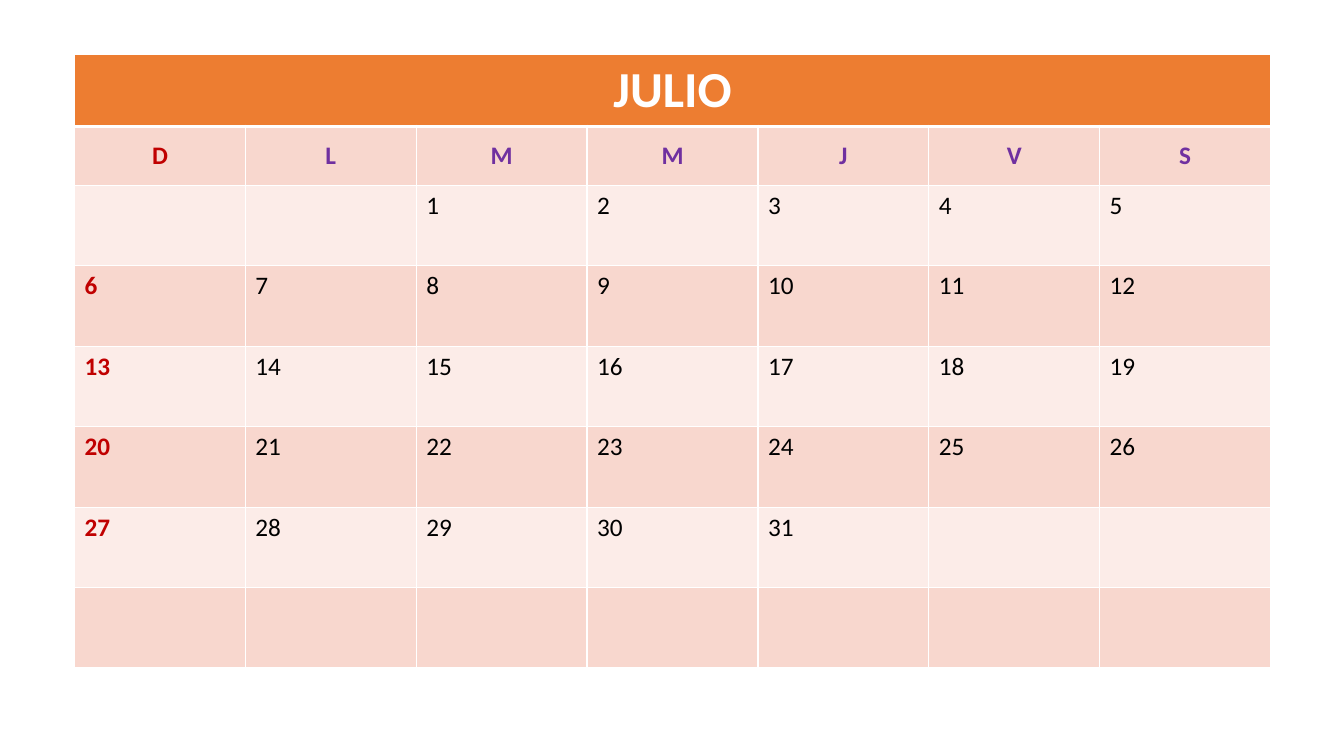
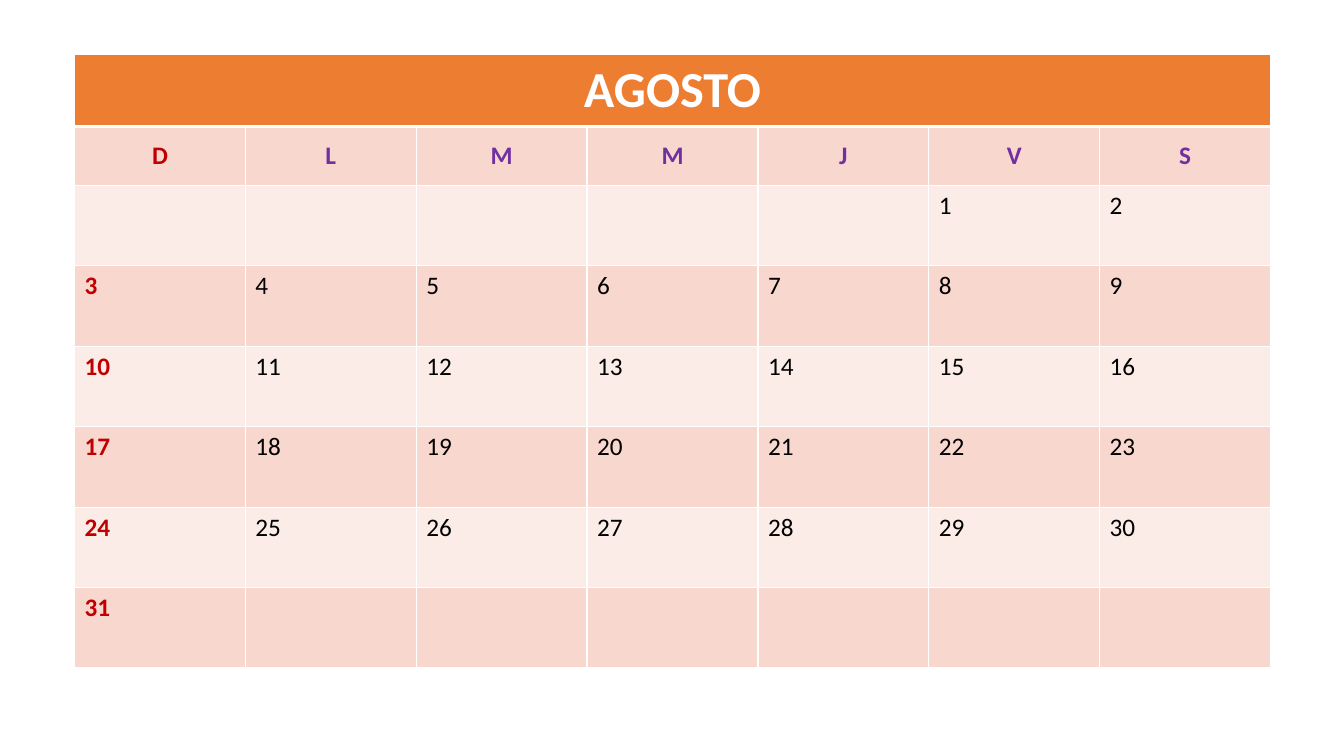
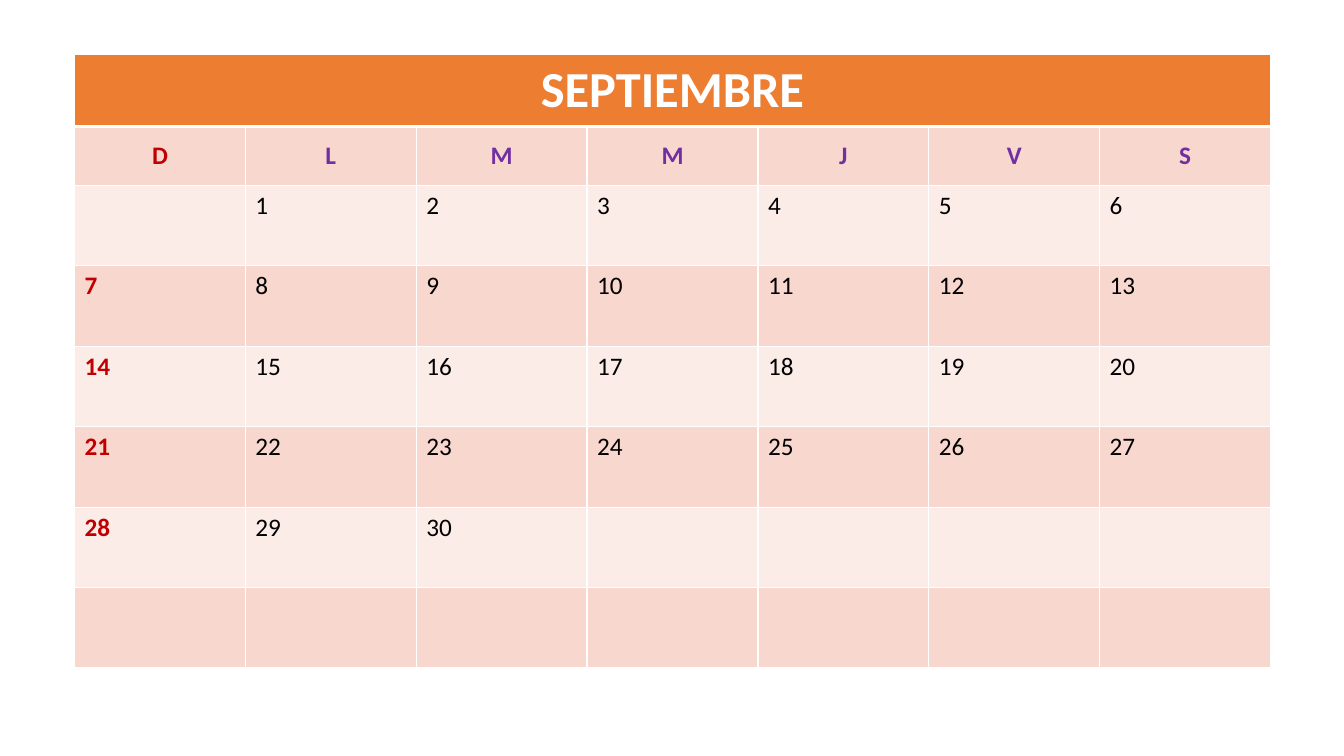
from dataclasses import dataclass

from lxml import etree
from pptx import Presentation
from pptx import util as u
from pptx.dml.color import RGBColor
from pptx.enum import text
from pptx.oxml.ns import qn

# name, column of day 1 (Sunday = 0), number of days
MONTHS = [("JULIO", 2, 31), ("AGOSTO", 5, 31), ("SEPTIEMBRE", 1, 30)]
WEEKDAYS = ["D", "L", "M", "M", "J", "V", "S"]
WEEKS = 6

PX = 9525
SLIDE_SIZE = (1280, 720)
TABLE_BOX = (71, 52, 1139, 582)
TITLE_HEIGHT, WEEKDAY_HEIGHT = 66, 56


@dataclass(frozen=True)
class Theme:
    font: str = "Calibri"
    title_size: int = 36
    body_size: int = 18
    title_fill: str = "ED7D31"
    bands: tuple = ("FCECE8", "F8D7CE")
    border: str = "FFFFFF"
    thin: int = 1
    thick: int = 3
    title: str = "FFFFFF"
    sunday: str = "C00000"
    weekday: str = "7030A0"
    day: str = "000000"


THEME = Theme()


def month_weeks(first_column, day_count):
    """Rows of day labels, blank outside the month."""
    numbers = [column - first_column + 1 for column in range(WEEKS * len(WEEKDAYS))]
    labels = [str(n) if 1 <= n <= day_count else "" for n in numbers]
    return [labels[i:i + len(WEEKDAYS)] for i in range(0, len(labels), len(WEEKDAYS))]


def set_borders(cell, top, bottom):
    properties = cell._tc.get_or_add_tcPr()
    widths = {"lnL": THEME.thin, "lnR": THEME.thin, "lnT": top, "lnB": bottom}
    for index, (side, width) in enumerate(widths.items()):
        line = etree.Element(qn(f"a:{side}"), w=str(u.Pt(width)))
        fill = etree.SubElement(line, qn("a:solidFill"))
        etree.SubElement(fill, qn("a:srgbClr"), val=THEME.border)
        properties.insert(index, line)


def write(cell, label, color, size=THEME.body_size, bold=True, centered=True):
    if not label:
        return
    cell.text = label
    paragraph = cell.text_frame.paragraphs[0]
    if centered:
        paragraph.alignment = text.PP_ALIGN.CENTER
        cell.vertical_anchor = text.MSO_ANCHOR.MIDDLE
    font = paragraph.font
    font.name, font.size, font.bold = THEME.font, u.Pt(size), bold
    font.color.rgb = RGBColor.from_string(color)


def style_grid(table):
    for row_index, row in enumerate(table.rows):
        color = THEME.bands[row_index % 2] if row_index else THEME.title_fill
        for cell in row.cells:
            cell.fill.solid()
            cell.fill.fore_color.rgb = RGBColor.from_string(color)
            set_borders(cell,
                        top=THEME.thick if row_index == 1 else THEME.thin,
                        bottom=THEME.thick if row_index == 0 else THEME.thin)


def add_month(presentation, name, first_column, day_count):
    slide = presentation.slides.add_slide(presentation.slide_layouts[6])
    left, top, width, height = (value * PX for value in TABLE_BOX)
    table = slide.shapes.add_table(WEEKS + 2, len(WEEKDAYS), left, top, width, height).table
    table.first_row = table.horz_banding = False

    week_height = (TABLE_BOX[3] - TITLE_HEIGHT - WEEKDAY_HEIGHT) / WEEKS
    for row, row_height in zip(table.rows, [TITLE_HEIGHT, WEEKDAY_HEIGHT] + [week_height] * WEEKS):
        row.height = round(row_height * PX)

    style_grid(table)
    table.cell(0, 0).merge(table.cell(0, len(WEEKDAYS) - 1))
    write(table.cell(0, 0), name, THEME.title, THEME.title_size)
    for column, label in enumerate(WEEKDAYS):
        write(table.cell(1, column), label, THEME.weekday if column else THEME.sunday)
    for row_index, week in enumerate(month_weeks(first_column, day_count), start=2):
        for column, label in enumerate(week):
            write(table.cell(row_index, column), label,
                  THEME.day if column else THEME.sunday,
                  bold=column == 0, centered=False)


def main():
    presentation = Presentation()
    presentation.slide_width, presentation.slide_height = (side * PX for side in SLIDE_SIZE)
    for month in MONTHS:
        add_month(presentation, *month)
    presentation.save("out.pptx")


if __name__ == "__main__":
    main()
